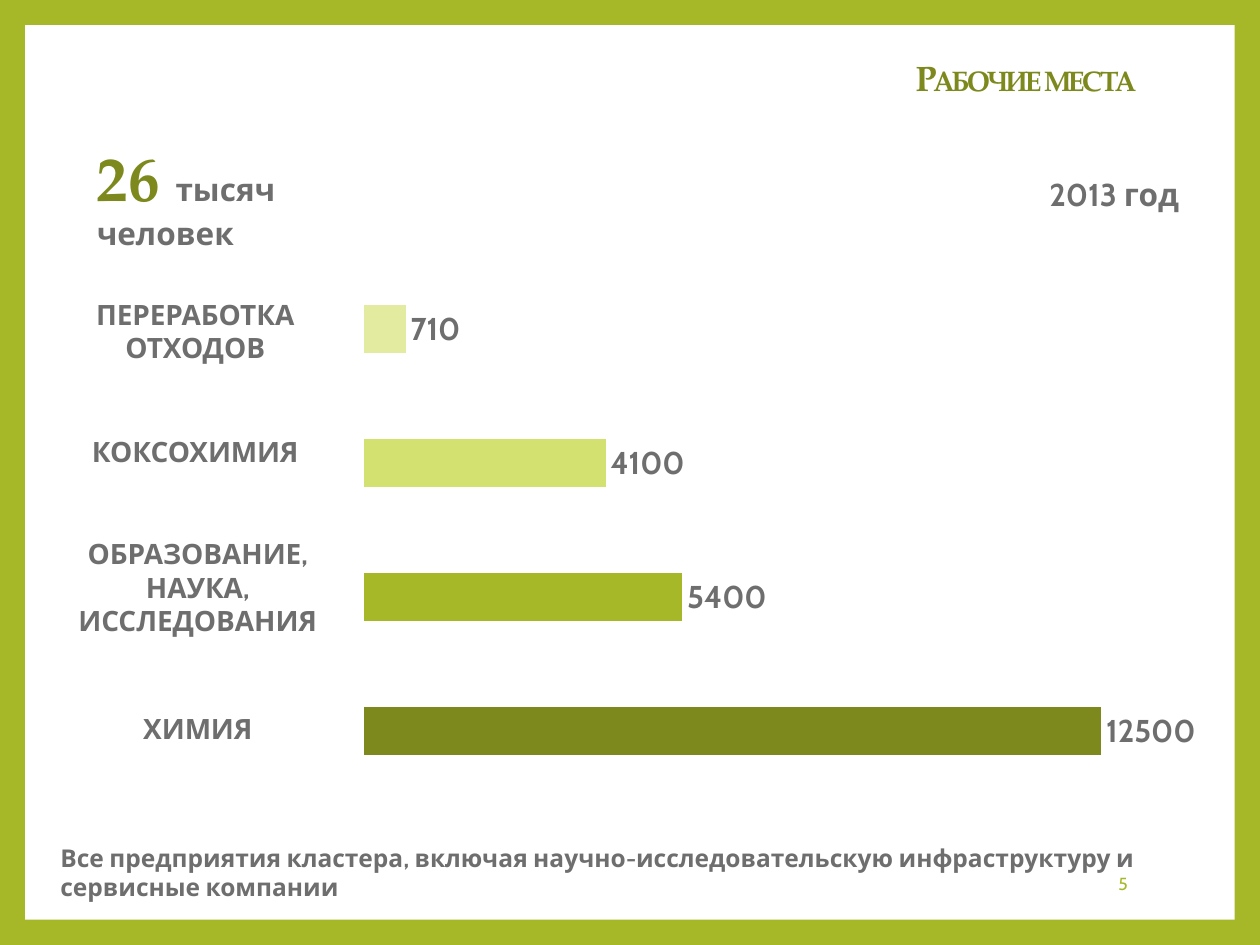
from lxml import etree
from pptx import Presentation
from pptx.chart.data import CategoryChartData
from pptx.dml.color import RGBColor
from pptx.enum.chart import XL_CHART_TYPE as Kind, XL_LABEL_POSITION as Spot
from pptx.enum.shapes import MSO_SHAPE as Shape
from pptx.enum.text import MSO_ANCHOR as Anchor, PP_ALIGN as Align
from pptx.oxml import parse_xml
from pptx.oxml.ns import nsdecls, qn
from pptx.util import Inches, Pt

WIDE, HIGH, EDGE = 10, 7.5, 0.2
SANS, SERIF = "Cabin", "TeX Gyre Pagella"
COLORS = {"frame": "A6B727", "page": "FFFFFF", "dark": "7D891D", "text": "6E6E6E",
          "lime": "D3E171", "pale": "E2EBA0"}

TITLE = "Рабочие места"
TOTAL = [("26 ", dict(size=36, font=SERIF, color="dark")),
         ("тысяч", {}),
         (" ", dict(size=20, font=SERIF, color="dark")),
         ("человек", {})]
YEAR = "2013 год"
NOTE = ("Все предприятия кластера, включая научно-исследовательскую "
        "инфраструктуру и сервисные компании")
NUMBER = "5"
# Bottom bar first: label, jobs, bar colour, label left, top and height
SECTORS = [
    ("ХИМИЯ", 12500, "dark", 0.4, 5.6, 0.37),
    ("ОБРАЗОВАНИЕ, НАУКА, ИССЛЕДОВАНИЯ", 5400, "frame", 0.4, 4.21, 0.91),
    ("КОКСОХИМИЯ", 4100, "lime", 0.38, 3.4, 0.37),
    ("ПЕРЕРАБОТКА ОТХОДОВ", 710, "pale", 0.38, 2.31, 0.64),
]
LABEL_WIDE = 2.34
CHART = (2.84, 2.04, 6.65, 4.34)
PLOT = dict(x=0.007, y=0.009, w=0.989, h=0.981)


def rgb(name):
    return RGBColor.from_string(COLORS[name])


def style(font, size=18, color="text", bold=True, name=SANS):
    font.size, font.bold, font.name = Pt(size), bold, name
    font.color.rgb = rgb(color)


def paint(fill, color):
    fill.solid()
    fill.fore_color.rgb = rgb(color)


def write(slide, box, text, size=18, color="text", bold=True, font=SANS,
          align=Align.LEFT, anchor=Anchor.TOP):
    """Add a text box; text is a string or a list of (string, format) runs."""
    frame = slide.shapes.add_textbox(*map(Inches, box)).text_frame
    frame.word_wrap, frame.vertical_anchor = True, anchor
    para = frame.paragraphs[0]
    para.alignment = align
    runs = [(text, {})] if isinstance(text, str) else text
    for words, own in runs:
        run = para.add_run()
        run.text = words
        style(run.font, own.get("size", size), own.get("color", color),
              bold, own.get("font", font))


def add_title(slide):
    title = slide.shapes.title
    title.left, title.top, title.width, title.height = map(
        Inches, (7.17, 0.36, 2.36, 0.55))
    frame = title.text_frame
    frame.word_wrap, frame.vertical_anchor = True, Anchor.MIDDLE
    para = frame.paragraphs[0]
    para.alignment, para.line_spacing = Align.LEFT, 0.9
    run = para.add_run()
    run.text = TITLE
    style(run.font, 20, "dark", name=SERIF)
    props = run.font._element
    props.set("cap", "small")
    props.set("spc", "-100")


def set_plot(chart):
    """Fix the inner plot area to the shares in PLOT."""
    area = chart._chartSpace.chart.plotArea
    for old in area.findall(qn("c:layout")):
        area.remove(old)
    layout = parse_xml(f"<c:layout {nsdecls('c')}><c:manualLayout/></c:layout>")
    parts = [("layoutTarget", "inner"), ("xMode", "edge"), ("yMode", "edge")]
    for tag, val in parts + list(PLOT.items()):
        etree.SubElement(layout[0], qn(f"c:{tag}")).set("val", str(val))
    area.insert(0, layout)


def add_bars(slide):
    data = CategoryChartData()
    data.categories = [str(i + 1) for i in range(len(SECTORS))]
    data.add_series("Series 1", [row[1] for row in SECTORS])
    chart = slide.shapes.add_chart(
        Kind.BAR_CLUSTERED, *map(Inches, CHART), data).chart
    chart.has_legend = chart.has_title = False
    chart.font.size, chart.font.name = Pt(10), SANS
    for axis in (chart.category_axis, chart.value_axis):
        axis.visible = axis.has_major_gridlines = False
    chart.value_axis.minimum_scale, chart.value_axis.maximum_scale = 0, 14000
    plot = chart.plots[0]
    plot.gap_width, plot.vary_by_categories = 182, False
    plot.has_data_labels = True
    labels = plot.data_labels
    labels.show_value, labels.position = True, Spot.OUTSIDE_END
    style(labels.font)
    for i, row in enumerate(SECTORS):
        paint(plot.series[0].points[i].format.fill, row[2])
    set_plot(chart)


def main():
    deck = Presentation()
    deck.slide_width, deck.slide_height = Inches(WIDE), Inches(HIGH)
    slide = deck.slides.add_slide(deck.slide_layouts[5])
    paint(slide.background.fill, "frame")
    page = slide.shapes.add_shape(Shape.RECTANGLE, *map(
        Inches, (EDGE, EDGE, WIDE - 2 * EDGE, HIGH - 2 * EDGE)))
    page.shadow.inherit = False
    paint(page.fill, "page")
    page.line.fill.background()
    slide.shapes._spTree.insert(2, page._element)  # behind the title

    add_title(slide)
    write(slide, (7.65, 6.81, 1.4, 0.4), NUMBER, size=10, color="frame",
          bold=False, align=Align.RIGHT, anchor=Anchor.MIDDLE)
    write(slide, (0.67, 1.05, 2.6, 0.71), TOTAL)
    write(slide, (0.38, 6.64, 9.32, 0.34), NOTE, size=14)
    add_bars(slide)
    for label, _, _, left, top, high in SECTORS:
        write(slide, (left, top, LABEL_WIDE, high), label, size=16,
              align=Align.CENTER)
    write(slide, (8.23, 1.34, 2.6, 0.4), YEAR)
    deck.save("out.pptx")


if __name__ == "__main__":
    main()
